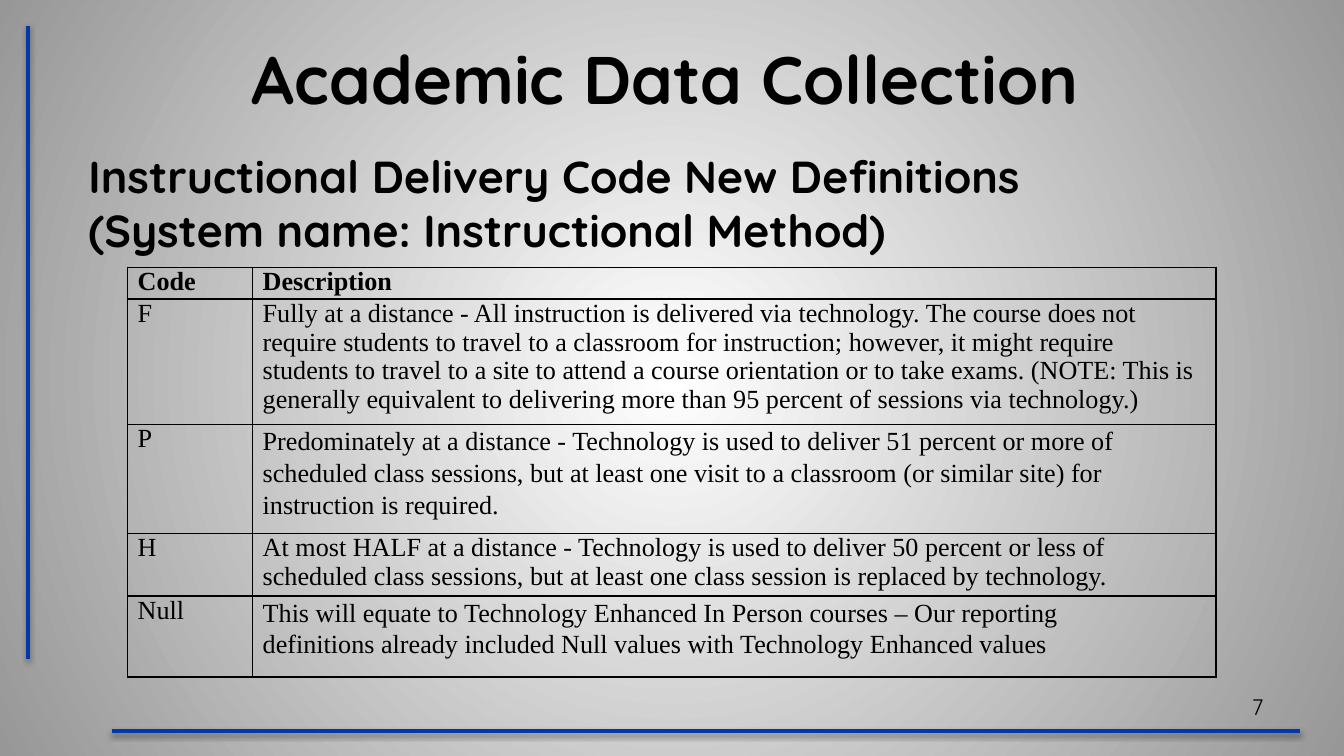
from lxml.etree import SubElement
from pptx import Presentation
from pptx.dml.color import RGBColor
from pptx.enum.shapes import MSO_CONNECTOR
from pptx.enum.text import MSO_ANCHOR, PP_ALIGN
from pptx.oxml import parse_xml
from pptx.oxml.ns import nsdecls, qn
from pptx.util import Inches, Pt

TITLE = "Academic Data Collection"
SUBTITLE = [
    "Instructional Delivery Code New Definitions",
    "(System name: Instructional Method)",
]
PAGE_NUMBER = "7"
CODES = [
    ("Code", "Description"),
    ("F", "Fully at a distance - All instruction is delivered via technology. The course does not "
          "require students to travel to a classroom for instruction; however, it might require "
          "students to travel to a site to attend a course orientation or to take exams. (NOTE: This is "
          "generally equivalent to delivering more than 95 percent of sessions via technology.)"),
    ("P", "Predominately at a distance - Technology is used to deliver 51 percent or more of "
          "scheduled class sessions, but at least one visit to a classroom (or similar site) for "
          "instruction is required."),
    ("H", "At most HALF at a distance - Technology is used to deliver 50 percent or less of "
          "scheduled class sessions, but at least one class session is replaced by technology."),
    ("Null", "This will equate to Technology Enhanced In Person courses – Our reporting "
             "definitions already included Null values with Technology Enhanced values"),
]
SPACED_CODES = {"P", "Null"}
COLUMN_WIDTHS = [0.93, 7.17]
ROW_HEIGHTS = [0.22, 0.88, 0.81, 0.44, 0.6]
RULES = [(0.21, 4.9, 0.21, 0.19), (0.83, 5.44, 9.67, 5.44)]
BLACK, BLUE = "000000", "0038A8"
HEADING_FONT, TABLE_FONT = "Quicksand", "Times New Roman"


def color(value):
    return RGBColor.from_string(value)


def style(paragraph, size, font, bold=False):
    for run in paragraph.runs:
        run.font.size = Pt(size)
        run.font.name = font
        run.font.bold = bold
        run.font.color.rgb = color(BLACK)


def paint_background(slide):
    fill = slide.background.fill
    fill.gradient()
    for stop, (position, shade) in zip(fill.gradient_stops, [(0, "FFFFFF"), (1, "979797")]):
        stop.position = position
        stop.color.rgb = color(shade)
    gradient = slide.background._cSld.find(".//" + qn("a:gradFill"))
    gradient.remove(gradient.find(qn("a:lin")))
    circle = SubElement(gradient, qn("a:path"), path="circle")
    SubElement(circle, qn("a:fillToRect"), l="50000", t="50000", r="50000", b="50000")


def add_rule(slide, ends):
    rule = slide.shapes.add_connector(MSO_CONNECTOR.STRAIGHT, *map(Inches, ends))
    rule.line.color.rgb = color(BLUE)
    rule.line.width = Pt(2)
    rule._element.spPr.append(parse_xml(
        f'<a:effectLst {nsdecls("a")}>'
        f'<a:outerShdw blurRad="{Pt(3.1)}" dist="{Pt(1.6)}" dir="5400000" rotWithShape="0">'
        f'<a:srgbClr val="{BLACK}"><a:alpha val="38000"/></a:srgbClr>'
        '</a:outerShdw></a:effectLst>'))


def add_text(slide, place, lines, size, bold, align, anchor, indent=0):
    frame = slide.shapes.add_textbox(*map(Inches, place)).text_frame
    frame.word_wrap = True
    frame.vertical_anchor = anchor
    frame.text = "\n".join(lines)
    for paragraph in frame.paragraphs:
        paragraph.alignment = align
        if indent:
            properties = paragraph._p.get_or_add_pPr()
            properties.set("marL", str(Inches(indent)))
            properties.set("indent", "0")
        style(paragraph, size, HEADING_FONT, bold)


def add_borders(cell):
    properties = cell._tc.get_or_add_tcPr()
    for index, side in enumerate(["lnL", "lnR", "lnT", "lnB"]):
        properties.insert(index, parse_xml(
            f'<a:{side} {nsdecls("a")} w="{Pt(1)}"><a:solidFill>'
            f'<a:srgbClr val="{BLACK}"/></a:solidFill></a:{side}>'))


def add_code_table(slide):
    table = slide.shapes.add_table(
        len(CODES), len(COLUMN_WIDTHS), Inches(0.95), Inches(1.99),
        Inches(sum(COLUMN_WIDTHS)), Inches(sum(ROW_HEIGHTS))).table
    table.first_row = table.horz_banding = False
    for column, width in zip(table.columns, COLUMN_WIDTHS):
        column.width = Inches(width)
    for row, height, entry in zip(table.rows, ROW_HEIGHTS, CODES):
        row.height = Inches(height)
        for cell, words in zip(row.cells, entry):
            cell.fill.background()
            add_borders(cell)
            cell.margin_left = cell.margin_right = Pt(5.4)
            cell.margin_top = cell.margin_bottom = 0
            cell.text_frame.text = words
            paragraph = cell.text_frame.paragraphs[0]
            paragraph.line_spacing = 1.0
            paragraph.space_before = paragraph.space_after = Pt(0)
            style(paragraph, 14, TABLE_FONT, entry is CODES[0])
        if entry[0] in SPACED_CODES:
            description = row.cells[1].text_frame.paragraphs[0]
            description.line_spacing = 1.1
            description.space_after = Pt(8)
    table.cell(len(CODES) - 1, 1).margin_right = Inches(0.35)


def main():
    deck = Presentation()
    deck.slide_width = Inches(10)
    deck.slide_height = deck.slide_width * 9 // 16
    slide = deck.slides.add_slide(deck.slide_layouts[6])
    paint_background(slide)
    for ends in RULES:
        add_rule(slide, ends)
    add_text(slide, (0.46, 0.11, 8.98, 0.94), [TITLE], 36, True,
             PP_ALIGN.CENTER, MSO_ANCHOR.MIDDLE)
    add_text(slide, (8.9, 5.11, 0.6, 0.3), [PAGE_NUMBER], 12, False,
             PP_ALIGN.RIGHT, MSO_ANCHOR.MIDDLE)
    add_code_table(slide)
    add_text(slide, (0.5, 1.06, 8.98, 3.97), SUBTITLE, 24, True,
             PP_ALIGN.LEFT, MSO_ANCHOR.TOP, indent=0.06)
    deck.save("out.pptx")


if __name__ == "__main__":
    main()
